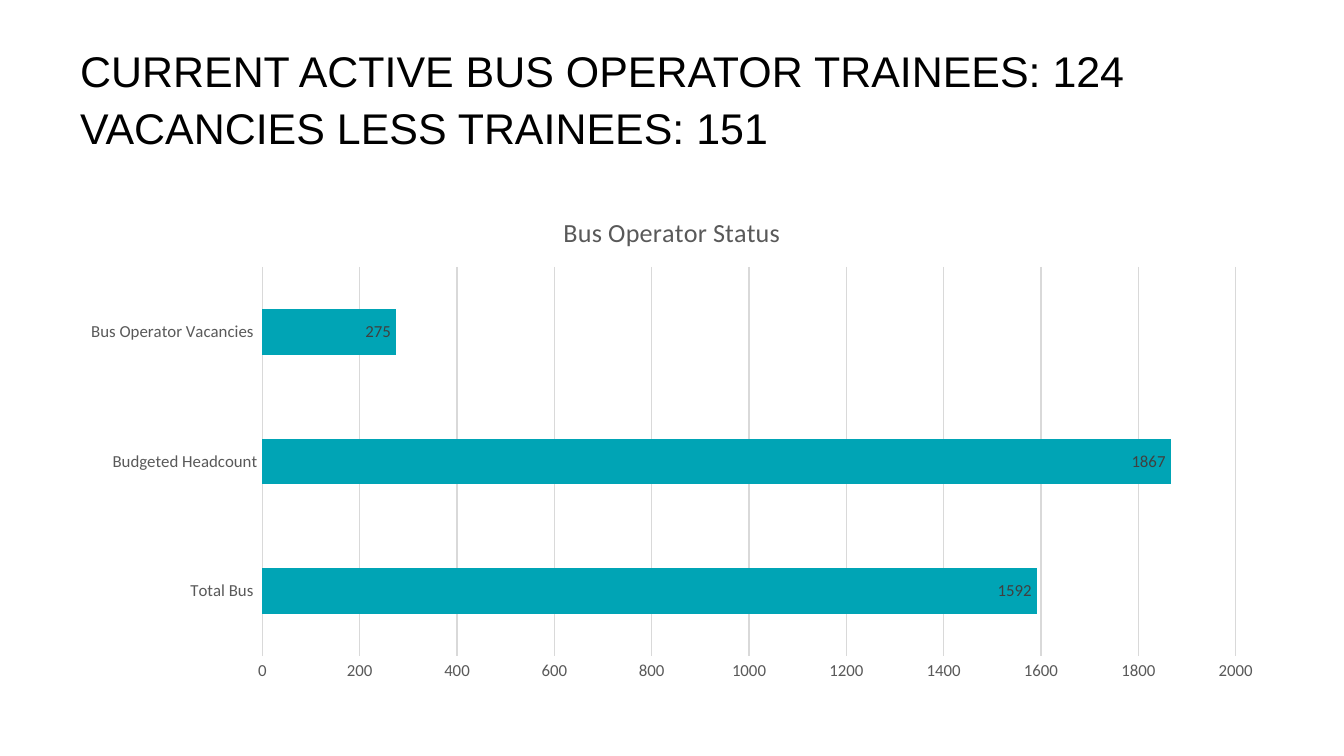
from dataclasses import dataclass

from lxml import etree
from pptx import Presentation
from pptx.chart.data import CategoryChartData
from pptx.dml.color import RGBColor
from pptx.enum.chart import XL_CHART_TYPE, XL_LABEL_POSITION, XL_TICK_MARK
from pptx.enum.text import MSO_ANCHOR
from pptx.util import Pt

BAR = XL_CHART_TYPE.BAR_CLUSTERED
INSIDE_END = XL_LABEL_POSITION.INSIDE_END
NO_TICK = XL_TICK_MARK.NONE
MIDDLE = MSO_ANCHOR.MIDDLE

# Content
HEADLINES = [
    "CURRENT ACTIVE BUS OPERATOR TRAINEES: 124",
    "VACANCIES LESS TRAINEES: 151",
]
CHART_TITLE = "Bus Operator Status"
STATUS = [
    ("Total Bus ", 1592),
    ("Budgeted Headcount", 1867),
    ("Bus Operator Vacancies ", 275),
]

# Layout in px
SLIDE_SIZE = (1344, 756)
HEADLINE_BOX = (67, 39, 1210, 126)
CHART_BOX = (67, 192, 1210, 499)
HANGING = 67


@dataclass(frozen=True)
class Theme:
    headline_font: str = "Arial"
    chart_font: str = "Calibri"
    headline: RGBColor = RGBColor(0x00, 0x00, 0x00)
    bar: RGBColor = RGBColor(0x00, 0xA4, 0xB5)
    axis: RGBColor = RGBColor(0x59, 0x59, 0x59)
    label: RGBColor = RGBColor(0x40, 0x40, 0x40)
    grid: RGBColor = RGBColor(0xD9, 0xD9, 0xD9)
    headline_size: int = 23
    title_size: int = 14
    chart_size: int = 10
    label_size: int = 9
    line_width: float = 0.75


THEME = Theme()


def px(length):
    return round(length * 914400 / 134.4)


def style_font(font, name, size, color):
    font.name = name
    font.size = Pt(size)
    font.bold = False
    font.color.rgb = color


def style_line(line):
    line.color.rgb = THEME.grid
    line.width = Pt(THEME.line_width)


def add_headlines(slide):
    box = slide.shapes.add_textbox(*map(px, HEADLINE_BOX))
    frame = box.text_frame
    frame.word_wrap = True
    frame.vertical_anchor = MIDDLE
    for i, headline in enumerate(HEADLINES):
        paragraph = frame.add_paragraph() if i else frame.paragraphs[0]
        paragraph.line_spacing = 0.9
        paragraph.space_after = Pt(6)
        properties = paragraph._p.get_or_add_pPr()
        properties.set("marL", str(px(HANGING)))
        properties.set("indent", str(-px(HANGING)))
        run = paragraph.add_run()
        run.text = headline
        style_font(run.font, THEME.headline_font, THEME.headline_size, THEME.headline)


def add_status_chart(slide):
    data = CategoryChartData()
    data.categories = [category for category, _ in STATUS]
    data.add_series("Series 1", [count for _, count in STATUS])
    chart = slide.shapes.add_chart(BAR, *map(px, CHART_BOX), data).chart
    style_font(chart.font, THEME.chart_font, THEME.chart_size, THEME.headline)
    chart.has_legend = False

    # Title
    chart.has_title = True
    chart.chart_title.include_in_layout = False
    title = chart.chart_title.text_frame.paragraphs[0].add_run()
    title.text = CHART_TITLE
    style_font(title.font, THEME.chart_font, THEME.title_size, THEME.axis)

    # Axes
    categories, values = chart.category_axis, chart.value_axis
    for axis in (categories, values):
        axis.major_tick_mark = axis.minor_tick_mark = NO_TICK
        style_font(axis.tick_labels.font, THEME.chart_font, THEME.label_size, THEME.axis)
    style_line(categories.format.line)
    values.format.line.fill.background()
    values.minimum_scale, values.maximum_scale = 0, 2000
    values.major_unit = 200
    values.has_major_gridlines = True
    style_line(values.major_gridlines.format.line)

    # Bars and their labels
    plot = chart.plots[0]
    plot.gap_width = 182
    plot.vary_by_categories = False
    bars = plot.series[0]
    bars.format.fill.solid()
    bars.format.fill.fore_color.rgb = THEME.bar
    labels = bars.data_labels
    labels.show_value = True
    labels.position = INSIDE_END
    style_font(labels.font, THEME.chart_font, THEME.label_size, THEME.label)


def main():
    deck = Presentation()
    deck.slide_width, deck.slide_height = map(px, SLIDE_SIZE)
    slide = deck.slides.add_slide(deck.slide_layouts[6])
    add_headlines(slide)
    add_status_chart(slide)
    deck.save("out.pptx")


if __name__ == "__main__":
    main()
